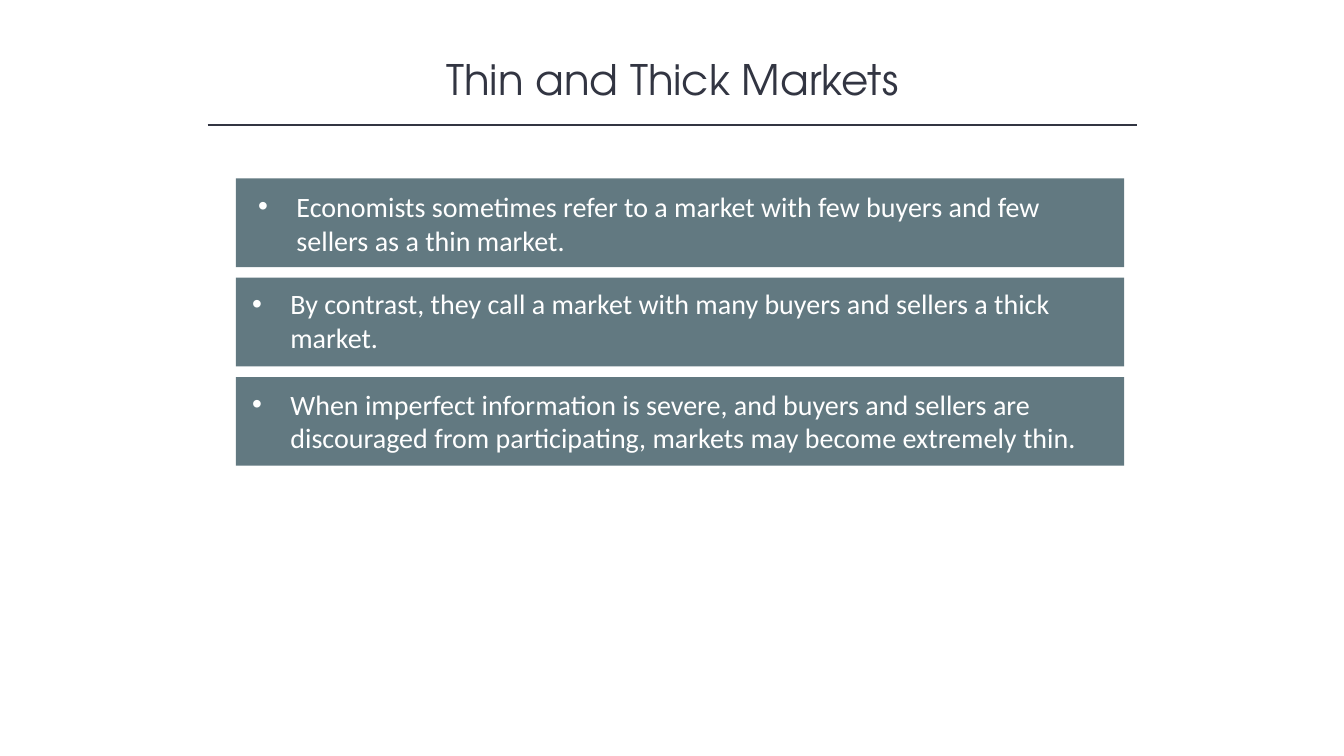
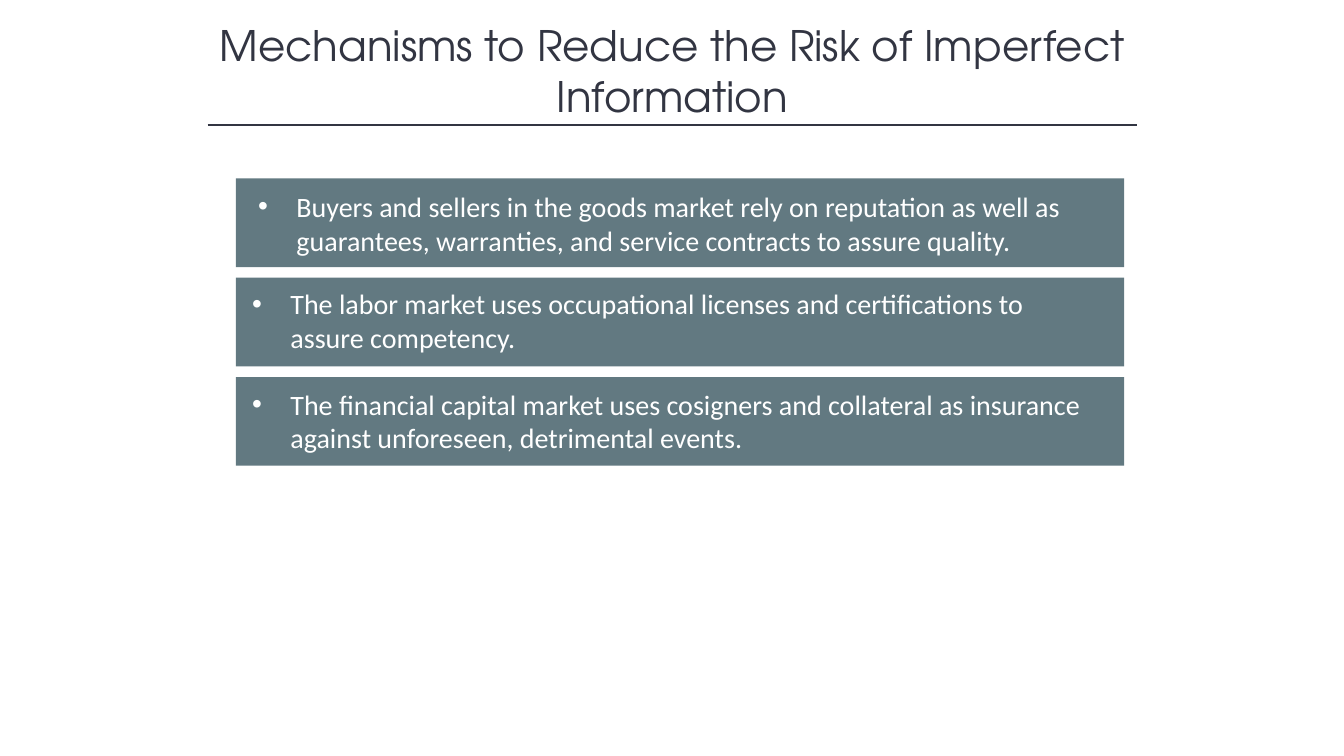
from lxml import etree
from pptx import Presentation
from pptx.dml.color import RGBColor
from pptx.enum.shapes import MSO_CONNECTOR, MSO_SHAPE
from pptx.enum.text import MSO_ANCHOR, PP_ALIGN
from pptx.oxml.ns import qn
from pptx.util import Inches, Pt

STRAIGHT = MSO_CONNECTOR.STRAIGHT
RECTANGLE = MSO_SHAPE.RECTANGLE
TOP, MIDDLE = MSO_ANCHOR.TOP, MSO_ANCHOR.MIDDLE
LEFT, CENTER = PP_ALIGN.LEFT, PP_ALIGN.CENTER

COLORS = {"ink": "323542", "band": "627981", "white": "FFFFFF"}
TITLE_FONT, BODY_FONT = "TeX Gyre Adventor", "Calibri"
TITLE_ONLY = 5

TITLE_LEFT, TITLE_WIDTH = 1.67, 10
RULE_LEFT, RULE_RIGHT, RULE_TOP = 2.06, 11.28, 1.24
BANDS_BOX = (2.34, 1.77, 8.81, 2.85)
BAND_HEIGHT = 0.88
BAND_INSETS = [(0.22, 0.11, 0.25), (0.16, 0.09, 0.31), (0.16, 0.10, 0.31)]
BULLET_INDENT = 0.38

SLIDES = [
    {
        "title": "Thin and Thick Markets",
        "title_top": 0.48,
        "title_height": 0.61,
        "points": [
            "Economists sometimes refer to a market with few buyers and few sellers as a thin market.",
            "By contrast, they call a market with many buyers and sellers a thick market.",
            "When imperfect information is severe, and buyers and sellers are discouraged from "
            "participating, markets may become extremely thin.",
        ],
    },
    {
        "title": "Mechanisms to Reduce the Risk of Imperfect Information",
        "title_top": 0.14,
        "title_height": 1.11,
        "points": [
            "Buyers and sellers in the goods market rely on reputation as well as guarantees, "
            "warranties, and service contracts to assure quality.",
            "The labor market uses occupational licenses and certifications to assure competency.",
            "The financial capital market uses cosigners and collateral as insurance against "
            "unforeseen, detrimental events.",
        ],
    },
]


def color(name):
    """Return the named colour."""
    return RGBColor.from_string(COLORS[name])


def write_text(frame, text, *, font, size, ink, align=LEFT, anchor=TOP, bullet=None):
    """Write one formatted paragraph, with a hanging bullet if one is given."""
    frame.word_wrap = True
    frame.vertical_anchor = anchor
    para = frame.paragraphs[0]
    para.alignment = align
    if bullet:
        properties = para._p.get_or_add_pPr()
        properties.set("marL", str(Inches(BULLET_INDENT)))
        properties.set("indent", str(-Inches(BULLET_INDENT)))
        etree.SubElement(properties, qn("a:buFont")).set("typeface", "Arial")
        etree.SubElement(properties, qn("a:buChar")).set("char", bullet)
    span = para.add_run()
    span.text = text
    span.font.name = font
    span.font.size = Pt(size)
    span.font.color.rgb = color(ink)


def add_heading(page, text, top, height):
    """Place the title and the rule beneath it."""
    title = page.shapes.title
    title.left, title.top = Inches(TITLE_LEFT), Inches(top)
    title.width, title.height = Inches(TITLE_WIDTH), Inches(height)
    write_text(title.text_frame, text, font=TITLE_FONT, size=30, ink="ink",
               align=CENTER, anchor=MIDDLE)
    rule = page.shapes.add_connector(STRAIGHT, Inches(RULE_LEFT), Inches(RULE_TOP),
                                     Inches(RULE_RIGHT), Inches(RULE_TOP))
    rule.line.color.rgb = color("ink")
    rule.line.width = Pt(1)
    etree.SubElement(rule._element.spPr, qn("a:effectLst"))


def add_bands(page, points, box):
    """Stack one filled band per point evenly over the box."""
    left, top, width, height = box
    pitch = (height - BAND_HEIGHT) / (len(points) - 1)
    for index, (point, insets) in enumerate(zip(points, BAND_INSETS)):
        band = page.shapes.add_shape(RECTANGLE, Inches(left), Inches(top + index * pitch),
                                     Inches(width), Inches(BAND_HEIGHT))
        band.shadow.inherit = False
        band.fill.solid()
        band.fill.fore_color.rgb = color("band")
        band.line.fill.background()
        frame = band.text_frame
        frame.margin_left, frame.margin_top, frame.margin_right = map(Inches, insets)
        write_text(frame, point, font=BODY_FONT, size=20, ink="white", bullet="•")


def add_points_slide(deck, content):
    """Add a slide with a ruled title and banded points."""
    page = deck.slides.add_slide(deck.slide_layouts[TITLE_ONLY])
    add_heading(page, content["title"], content["title_top"], content["title_height"])
    add_bands(page, content["points"], BANDS_BOX)


def main():
    """Build and save the deck."""
    deck = Presentation()
    deck.slide_width, deck.slide_height = Inches(13.33), Inches(7.5)
    for content in SLIDES:
        add_points_slide(deck, content)
    deck.save("out.pptx")


if __name__ == "__main__":
    main()
